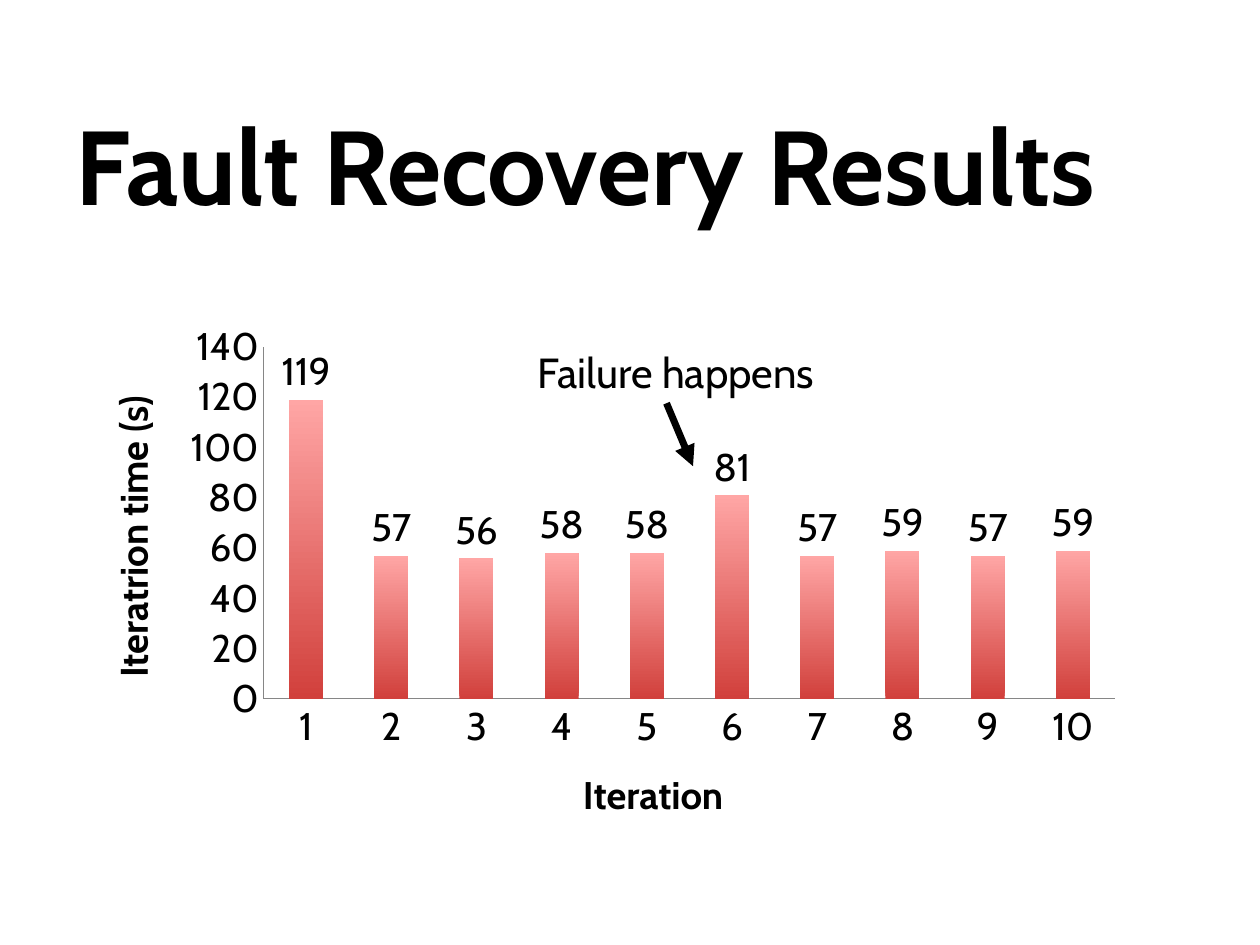
from dataclasses import dataclass

from lxml import etree
from pptx import Presentation
from pptx.chart.data import CategoryChartData
from pptx.dml.color import RGBColor
from pptx.enum.chart import XL_CHART_TYPE, XL_LABEL_POSITION, XL_TICK_MARK
from pptx.enum.shapes import MSO_CONNECTOR
from pptx.enum.text import MSO_ANCHOR, MSO_AUTO_SIZE, PP_ALIGN
from pptx.oxml import parse_xml
from pptx.oxml.ns import nsdecls, qn
from pptx.util import Inches, Pt

COLUMNS = XL_CHART_TYPE.COLUMN_CLUSTERED
OUTSIDE_END = XL_LABEL_POSITION.OUTSIDE_END
NO_TICK = XL_TICK_MARK.NONE
STRAIGHT = MSO_CONNECTOR.STRAIGHT
MIDDLE = MSO_ANCHOR.MIDDLE
NO_FIT = MSO_AUTO_SIZE.NONE
GROW = MSO_AUTO_SIZE.SHAPE_TO_FIT_TEXT
LEFT = PP_ALIGN.LEFT


@dataclass(frozen=True)
class Theme:
    font: str = "Cabin"
    ink: RGBColor = RGBColor(0x00, 0x00, 0x00)
    axis: RGBColor = RGBColor(0x86, 0x86, 0x86)
    bar_bottom: RGBColor = RGBColor(0xD1, 0x40, 0x3C)
    bar_top: RGBColor = RGBColor(0xFF, 0xA6, 0xA5)
    title_size: int = 60
    note_size: int = 24
    chart_size: int = 22


THEME = Theme()
ITERATION_TIMES = [119, 57, 56, 58, 58, 81, 57, 59, 57, 59]
PLOT_LAYOUT = {"x": 0.18, "y": 0.11, "w": 0.78, "h": 0.61}


def style_font(font, size, bold=False):
    font.name = THEME.font
    font.size = Pt(size)
    font.bold = bold
    font.color.rgb = THEME.ink


def write_text(frame, text, size, bold=False, align=LEFT):
    para = frame.paragraphs[0]
    para.alignment = align
    span = para.add_run()
    span.text = text
    style_font(span.font, size, bold)


def add_title(page, text):
    title = page.shapes.title
    title.left, title.top = Inches(0.5), Inches(0.67)
    title.width, title.height = Inches(9), Inches(1.25)
    frame = title.text_frame
    frame.auto_size = NO_FIT
    frame.vertical_anchor = MIDDLE
    write_text(frame, text, THEME.title_size, bold=True)


def add_note(page, text, left, top, width, height):
    box = page.shapes.add_textbox(Inches(left), Inches(top), Inches(width), Inches(height))
    frame = box.text_frame
    frame.word_wrap = False
    frame.auto_size = GROW
    write_text(frame, text, THEME.note_size)


def add_arrow(page, start, end, width):
    arrow = page.shapes.add_connector(STRAIGHT, *map(Inches, start + end))
    arrow.line.color.rgb = THEME.ink
    arrow.line.width = Pt(width)
    etree.SubElement(arrow.line._get_or_add_ln(), qn("a:tailEnd"), type="triangle")
    etree.SubElement(arrow._element.spPr, qn("a:effectLst"))


def style_axis(axis, title):
    axis.has_major_gridlines = False
    axis.major_tick_mark = axis.minor_tick_mark = NO_TICK
    axis.format.line.color.rgb = THEME.axis
    axis.format.line.width = Pt(0.75)
    style_font(axis.tick_labels.font, THEME.chart_size)
    write_text(axis.axis_title.text_frame, title, THEME.chart_size, bold=True, align=None)


def place_plot(chart):
    plot_area = chart._chartSpace.chart.plotArea
    for old in plot_area.findall(qn("c:layout")):
        plot_area.remove(old)
    modes = '<c:xMode val="edge"/><c:yMode val="edge"/>'
    sizes = "".join(f'<c:{key} val="{share}"/>' for key, share in PLOT_LAYOUT.items())
    plot_area.insert(0, parse_xml(
        f'<c:layout {nsdecls("c")}><c:manualLayout><c:layoutTarget val="inner"/>'
        f"{modes}{sizes}</c:manualLayout></c:layout>"
    ))


def style_bars(plot):
    plot.gap_width = 150
    plot.vary_by_categories = False
    fill = plot.series[0].format.fill
    fill.gradient()
    fill.gradient_angle = 90
    for stop, color in zip(fill.gradient_stops, (THEME.bar_bottom, THEME.bar_top)):
        stop.color.rgb = color
    plot.has_data_labels = True
    labels = plot.data_labels
    labels.show_value = True
    labels.number_format = "#,##0"
    labels.number_format_is_linked = False
    labels.position = OUTSIDE_END
    style_font(labels.font, THEME.chart_size)


def add_time_chart(page):
    data = CategoryChartData()
    data.categories = [str(number + 1) for number in range(len(ITERATION_TIMES))]
    data.add_series("Series 1", ITERATION_TIMES)
    frame = page.shapes.add_chart(
        COLUMNS, Inches(0.53), Inches(2.25), Inches(8.67), Inches(4.58), data
    )
    chart = frame.chart
    chart.has_legend = False
    chart.has_title = False
    style_font(chart.font, THEME.chart_size)
    style_axis(chart.category_axis, "Iteration")
    style_axis(chart.value_axis, "Iteratrion time (s)")
    chart.value_axis.minimum_scale = 0
    chart.value_axis.maximum_scale = 140
    chart.value_axis.major_unit = 20
    style_bars(chart.plots[0])
    place_plot(chart)


def main():
    deck = Presentation()
    deck.slide_width, deck.slide_height = Inches(10), Inches(7.5)
    page = deck.slides.add_slide(deck.slide_layouts[5])
    add_title(page, "Fault Recovery Results")
    add_time_chart(page)
    add_arrow(page, (5.29, 3.2), (5.5, 3.7), 4)
    add_note(page, "Failure happens", 4.17, 2.7, 2.4, 0.5)
    deck.save("out.pptx")


if __name__ == "__main__":
    main()
